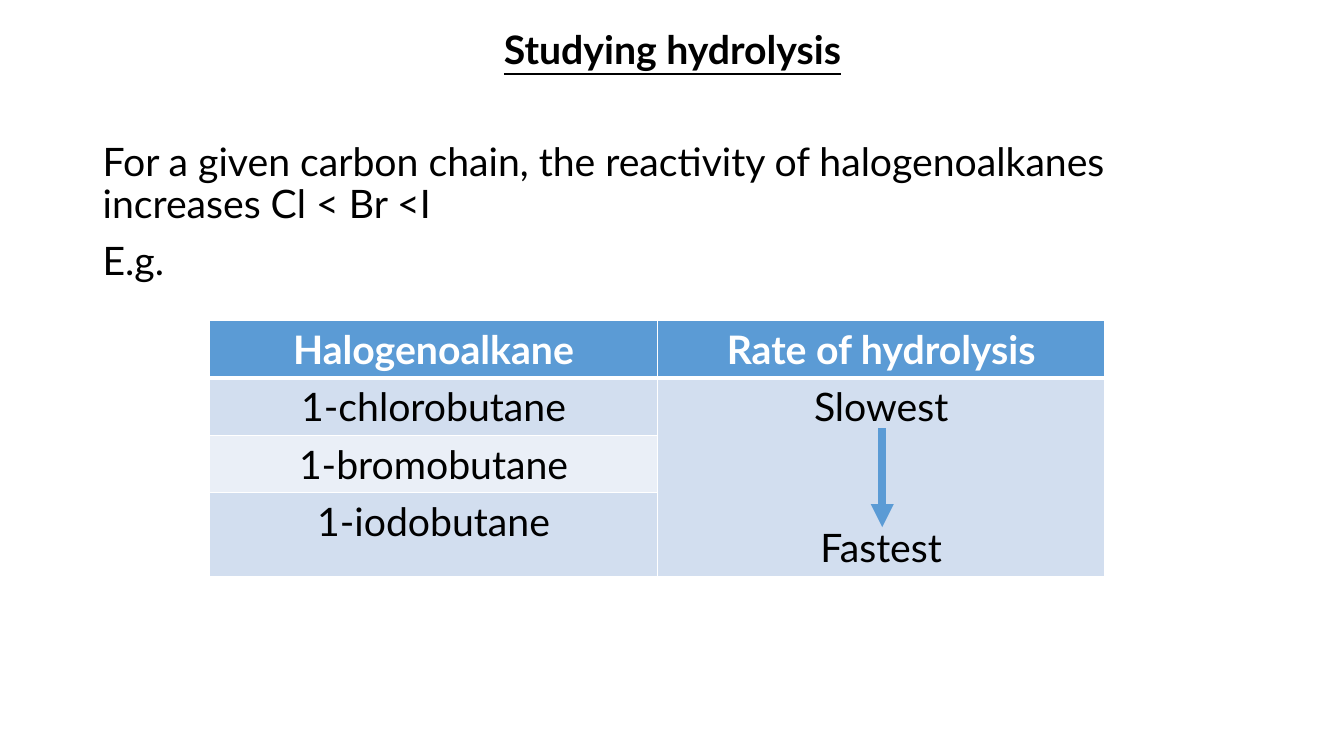
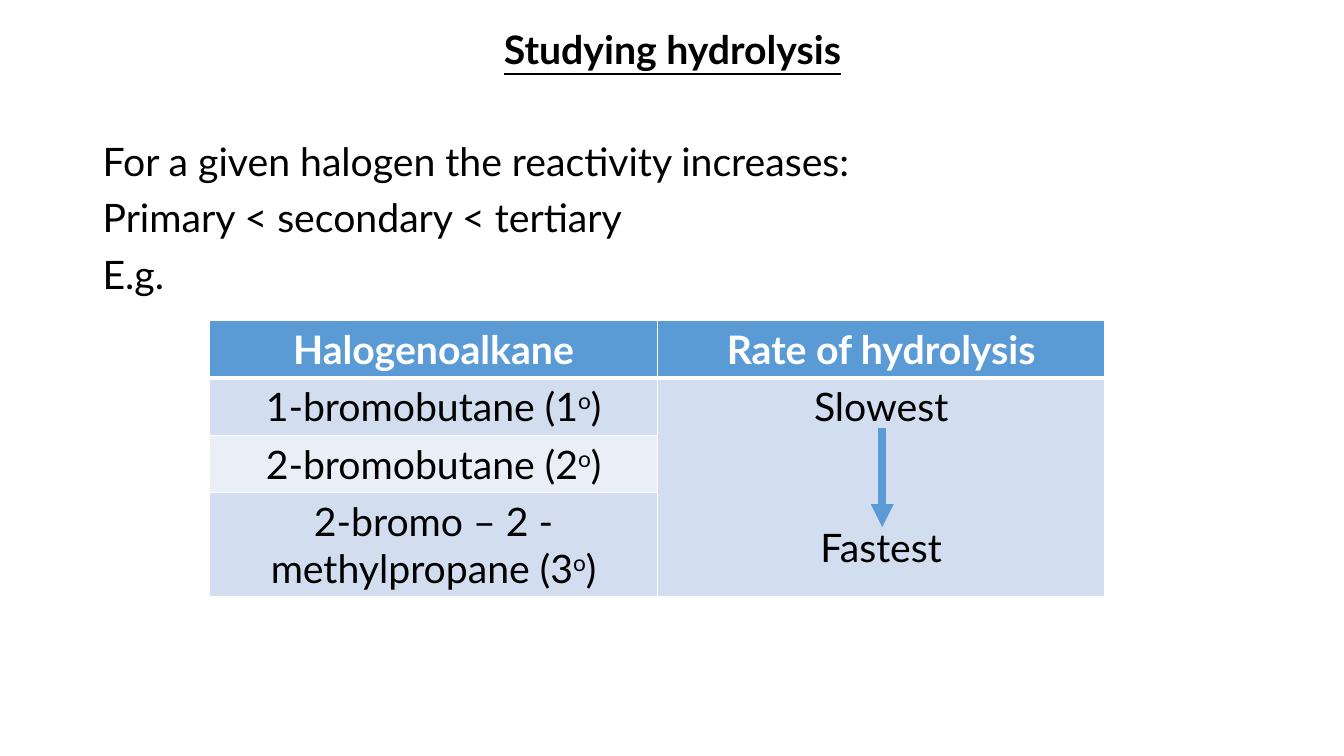
"""Build two slides comparing rates of hydrolysis of halogenoalkanes."""
import lxml.etree
import pptx
import pptx.dml.color
import pptx.enum.shapes
import pptx.enum.text
import pptx.oxml.ns
import pptx.util

Inches = pptx.util.Inches
Pt = pptx.util.Pt
qualified = pptx.oxml.ns.qn
CENTER = pptx.enum.text.PP_ALIGN.CENTER
LEFT = pptx.enum.text.PP_ALIGN.LEFT

COLOURS = {
    "text": "000000",
    "white": "FFFFFF",
    "accent": "5B9BD5",
    "dark band": "D2DEEF",
    "light band": "EAEFF7",
}
FONT = {"name": "Lato", "size": Pt(28), "bold": False}
HEADING_FONT = {"bold": True, "underline": True}
BODY_SPACING = {"line_spacing": 0.9, "space_before": Pt(10)}
HEADERS = ["Halogenoalkane", "Rate of hydrolysis"]
ROW_HEIGHT = 0.57

SLIDES = [
    {
        "body": [
            "For a given carbon chain, the reactivity of halogenoalkanes increases Cl < Br <I",
            "E.g.",
        ],
        "compounds": ["1-chlorobutane", "1-bromobutane", "1-iodobutane"],
        "last_height": 0.83,
    },
    {
        "body": [
            "For a given halogen the reactivity increases:",
            "Primary < secondary < tertiary",
            "E.g.",
        ],
        "compounds": [
            "1-bromobutane (1|o|)",
            "2-bromobutane (2|o|)",
            "2-bromo – 2 - methylpropane (3|o|)",
        ],
        "last_height": 1.03,
    },
]


def colour(name):
    return pptx.dml.color.RGBColor.from_string(COLOURS[name])


def apply(target, values):
    for name, value in values.items():
        setattr(target, name, value)


class Deck:
    """Hold the shared style and the current slide."""

    def __init__(self):
        self.presentation = pptx.Presentation()
        self.presentation.slide_width = Inches(13.33)
        self.presentation.slide_height = Inches(7.5)
        self.slide = None

    def add_slide(self):
        layout = self.presentation.slide_layouts[6]
        self.slide = self.presentation.slides.add_slide(layout)

    def add_text(self, paragraph, text, alignment, ink="text", font=None, spacing=None):
        apply(paragraph, {"alignment": alignment, **(spacing or {})})
        for index, piece in enumerate(text.split("|")):
            run = paragraph.add_run()
            run.text = piece
            apply(run.font, {**FONT, **(font or {})})
            run.font.color.rgb = colour(ink)
            if index % 2:
                run.font._element.set("baseline", "30000")

    def body(self, title, lines):
        box = self.slide.shapes.add_textbox(
            Inches(0.92), Inches(0.25), Inches(11.5), Inches(6.5)
        )
        frame = box.text_frame
        frame.word_wrap = True
        self.add_text(frame.paragraphs[0], title, CENTER, font=HEADING_FONT, spacing=BODY_SPACING)
        for index, line in enumerate(lines):
            gap = {} if index else {"space_before": Pt(50)}
            self.add_text(frame.add_paragraph(), line, LEFT, spacing={**BODY_SPACING, **gap})

    def borders(self, cell, widths):
        properties = cell._tc.get_or_add_tcPr()
        for index, (side, width) in enumerate(widths.items()):
            line = lxml.etree.Element(qualified(f"a:ln{side}"), w=str(Pt(width)))
            fill = lxml.etree.SubElement(line, qualified("a:solidFill"))
            lxml.etree.SubElement(fill, qualified("a:srgbClr"), val=COLOURS["white"])
            properties.insert(index, line)

    def table(self, compounds, last_height):
        heights = [ROW_HEIGHT] * len(compounds) + [last_height]
        frame = self.slide.shapes.add_table(
            len(heights), 2, Inches(2.08), Inches(3.18), Inches(8.88), Inches(sum(heights))
        )
        table = frame.table
        apply(table, {"first_row": False, "horz_banding": False})
        for row, height in zip(table.rows, heights):
            row.height = Inches(height)
        table.cell(1, 1).merge(table.cell(len(compounds), 1))

        for column, header in enumerate(HEADERS):
            paragraph = table.cell(0, column).text_frame.paragraphs[0]
            self.add_text(paragraph, header, CENTER, "white", {"bold": True})
        for row, compound in enumerate(compounds, 1):
            self.add_text(table.cell(row, 0).text_frame.paragraphs[0], compound, CENTER)
        rates = table.cell(1, 1).text_frame
        self.add_text(rates.paragraphs[0], "Slowest", CENTER)
        self.add_text(rates.add_paragraph(), "Fastest", CENTER, spacing={"space_before": Pt(67.2)})

        for row in range(len(heights)):
            band = ("dark band" if row % 2 else "light band") if row else "accent"
            widths = {"L": 1, "R": 1, "T": 3 if row == 1 else 1, "B": 1 if row else 3}
            for column in range(len(HEADERS)):
                cell = table.cell(row, column)
                if not cell.is_spanned:
                    cell.fill.solid()
                    cell.fill.fore_color.rgb = colour(band)
                    self.borders(cell, widths)

    def arrow(self, x, top, bottom):
        arrow = self.slide.shapes.add_connector(
            pptx.enum.shapes.MSO_CONNECTOR.STRAIGHT,
            Inches(x), Inches(top), Inches(x), Inches(bottom),
        )
        arrow.line.width = Pt(5.5)
        arrow.line.color.rgb = colour("accent")
        properties = arrow._element.spPr
        outline = properties.find(qualified("a:ln"))
        lxml.etree.SubElement(outline, qualified("a:tailEnd"), type="triangle")
        lxml.etree.SubElement(properties, qualified("a:effectLst"))


def main():
    deck = Deck()
    for content in SLIDES:
        deck.add_slide()
        deck.body("Studying hydrolysis", content["body"])
        deck.table(content["compounds"], content["last_height"])
        deck.arrow(8.75, 4.25, 5.23)
    deck.presentation.save("out.pptx")


if __name__ == "__main__":
    main()
